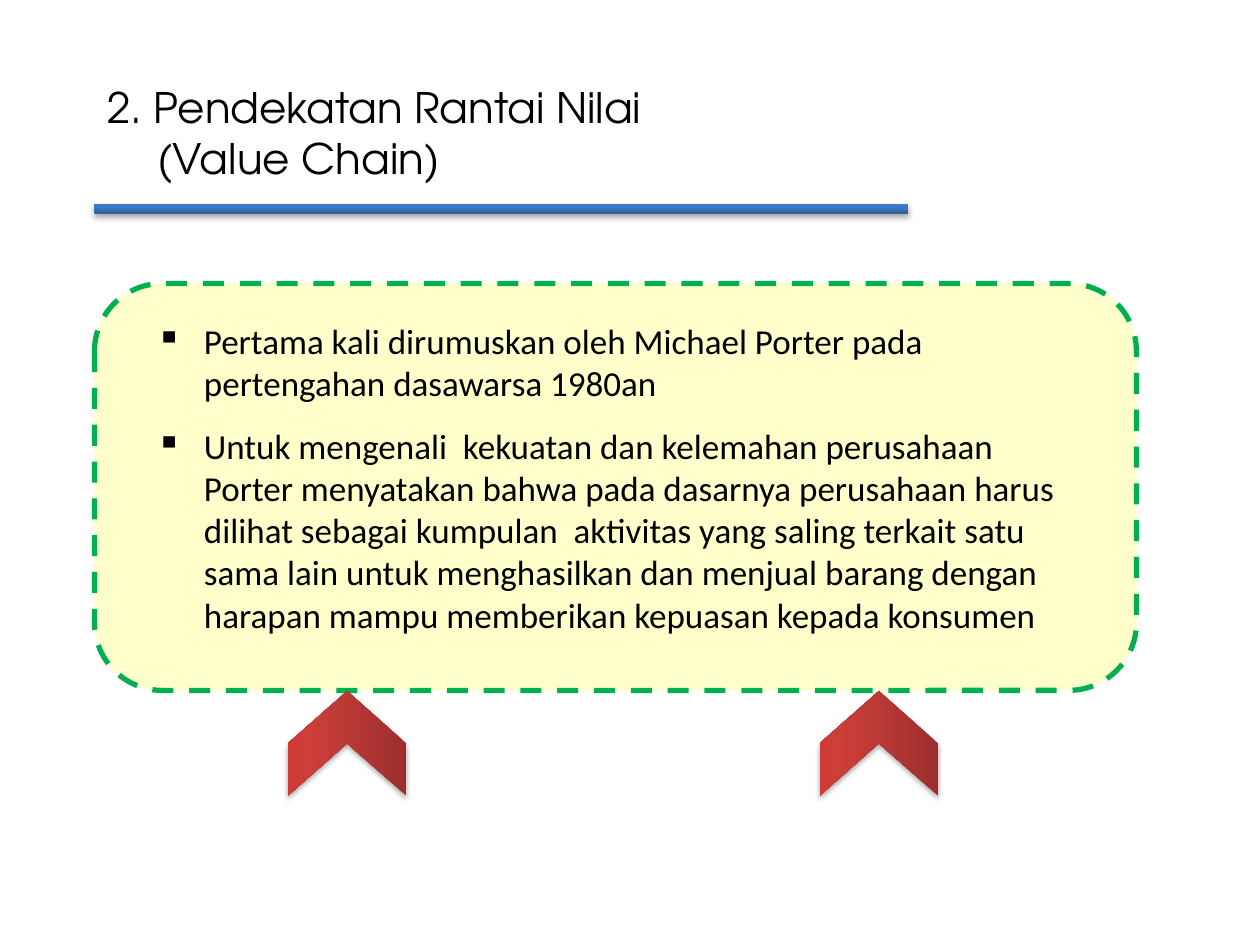
from lxml import etree
from pptx import Presentation
from pptx import util as u
from pptx.dml.color import RGBColor
from pptx.enum import dml, shapes, text
from pptx.oxml import parse_xml
from pptx.oxml.ns import nsdecls, qn

BLACK = RGBColor(0x00, 0x00, 0x00)
CREAM = RGBColor(0xFF, 0xFF, 0xCC)
GREEN = RGBColor(0x00, 0xB0, 0x50)
BLUES = [RGBColor(0x2F, 0x5F, 0x99), RGBColor(0x3D, 0x7C, 0xC7), RGBColor(0x3A, 0x7C, 0xCB)]
REDS = [RGBColor(0x9C, 0x2F, 0x2D), RGBColor(0xCB, 0x3E, 0x3A), RGBColor(0xCE, 0x3B, 0x37)]
STOPS = [0, 80, 100]

TITLE = ["2. Pendekatan Rantai Nilai", "(Value Chain)"]
POINTS = [
    "Pertama kali dirumuskan oleh Michael Porter pada pertengahan dasawarsa 1980an",
    "Untuk mengenali  kekuatan dan kelemahan perusahaan Porter menyatakan bahwa "
    "pada dasarnya perusahaan harus dilihat sebagai kumpulan  aktivitas yang saling "
    "terkait satu sama lain untuk menghasilkan dan menjual barang dengan harapan "
    "mampu memberikan kepuasan kepada konsumen",
]


class ValueChainSlide:
    """Style and current slide; lengths are cells of a 40 by 30 grid."""

    COLUMNS, ROWS = 40, 30
    TITLE_FONT = {"name": "TeX Gyre Adventor", "size": u.Pt(24)}
    BODY_FONT = {"name": "Calibri", "size": u.Pt(20)}

    def __init__(self, deck):
        self.cell_w = deck.slide_width / self.COLUMNS
        self.cell_h = deck.slide_height / self.ROWS
        self.slide = deck.slides.add_slide(deck.slide_layouts[5])

    def area(self, left, top, width, height):
        return (int(left * self.cell_w), int(top * self.cell_h),
                int(width * self.cell_w), int(height * self.cell_h))

    def set_frame(self, frame):
        settings = {"word_wrap": True, "auto_size": text.MSO_AUTO_SIZE.NONE,
                    "vertical_anchor": text.MSO_ANCHOR.TOP}
        for key, value in settings.items():
            setattr(frame, key, value)

    def set_font(self, paragraph, style):
        paragraph.alignment = text.PP_ALIGN.LEFT
        for key, value in style.items():
            setattr(paragraph.font, key, value)
        paragraph.font.color.rgb = BLACK

    def title(self, lines, area, indent):
        heading = self.slide.shapes.title
        places = dict(zip(("left", "top", "width", "height"), self.area(*area)))
        for key, value in places.items():
            setattr(heading, key, value)
        self.set_frame(heading.text_frame)
        heading.text_frame.text = "\n".join(lines)
        for number, paragraph in enumerate(heading.text_frame.paragraphs):
            if number:
                paragraph._p.get_or_add_pPr().set("marL", str(indent))
            self.set_font(paragraph, self.TITLE_FONT)

    def bullets(self, points, area, hang):
        frame = self.slide.shapes.add_textbox(*self.area(*area)).text_frame
        self.set_frame(frame)
        frame.text = "\n".join(points)
        for number, paragraph in enumerate(frame.paragraphs):
            paragraph.space_before = u.Pt(12 if number else 0)
            properties = paragraph._p.get_or_add_pPr()
            properties.set("marL", str(hang))
            properties.set("indent", str(-hang))
            etree.SubElement(properties, qn("a:buChar")).set("char", "▪")
            self.set_font(paragraph, self.BODY_FONT)

    def panel(self, area):
        panel = self.slide.shapes.add_shape(
            shapes.MSO_SHAPE.ROUNDED_RECTANGLE, *self.area(*area))
        panel.shadow.inherit = False
        panel.fill.solid()
        panel.fill.fore_color.rgb = CREAM
        panel.line.color.rgb = GREEN
        panel.line.width = u.Pt(3)
        panel.line.dash_style = dml.MSO_LINE.DASH

    def glossy(self, kind, area, colors, rotation=0):
        """A shape with an upward gradient and a soft shadow below it."""
        shape = self.slide.shapes.add_shape(kind, *self.area(*area))
        shape.rotation = rotation
        shape.line.fill.background()
        stops = "".join(
            f'<a:gs pos="{stop * 1000}"><a:srgbClr val="{color}"/></a:gs>'
            for stop, color in zip(STOPS, colors))
        gradient = parse_xml(
            f'<a:gradFill {nsdecls("a")} rotWithShape="1"><a:gsLst>{stops}</a:gsLst>'
            '<a:lin ang="16200000" scaled="0"/></a:gradFill>')
        shadow = parse_xml(
            f'<a:effectLst {nsdecls("a")}><a:outerShdw blurRad="{u.Pt(3.1)}" '
            f'dist="{u.Pt(1.8)}" dir="5400000" rotWithShape="0">'
            f'<a:srgbClr val="{BLACK}"><a:alpha val="35000"/></a:srgbClr>'
            '</a:outerShdw></a:effectLst>')
        properties = shape._element.spPr
        properties.find(qn("a:prstGeom")).addnext(gradient)
        properties.append(shadow)


def main():
    deck = Presentation()
    deck.slide_width, deck.slide_height = u.Inches(10), u.Inches(7.5)
    page = ValueChainSlide(deck)

    # Panel with the key points
    page.panel((3, 9, 33.08, 12.92))
    page.bullets(POINTS, (4.56, 9.96, 29.64, 11.32), u.Inches(0.38))

    # Title and the bar below it
    page.title(TITLE, (3, 2.4, 22.68, 3.64), u.Inches(0.4))
    page.glossy(shapes.MSO_SHAPE.ROUNDED_RECTANGLE, (3, 6.48, 25.84, 0.32), BLUES)

    # Upward chevrons under the panel
    for left in (9.36, 26.24):
        page.glossy(shapes.MSO_SHAPE.CHEVRON, (left, 21.72, 3.32, 3.76), REDS, 270)

    deck.save("out.pptx")


if __name__ == "__main__":
    main()
